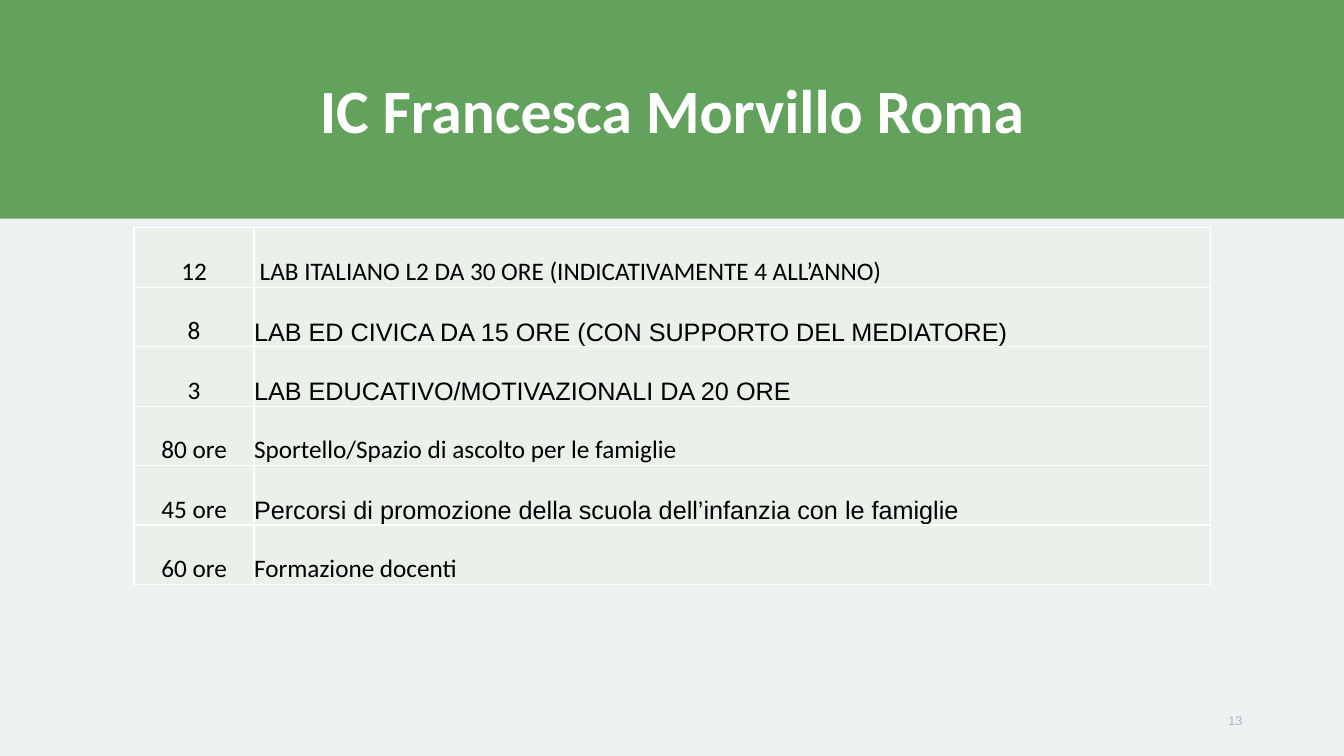
from dataclasses import dataclass

from lxml.etree import SubElement
from pptx import Presentation
from pptx.dml.color import RGBColor
from pptx.enum.shapes import MSO_SHAPE
from pptx.enum.text import MSO_ANCHOR, PP_ALIGN
from pptx.oxml.ns import qn
from pptx.util import Inches, Pt

GREEN, WHITE, BLACK = "62A25D", "FFFFFF", "000000"
PAGE, CELL, PAGE_NUMBER = "EDF1F2", "EAF0EA", "A7BBC0"


@dataclass(frozen=True)
class Activity:
    amount: str
    description: str
    font: str = "Calibri"


ACTIVITIES = [
    Activity("12", " LAB ITALIANO L2 DA 30 ORE (INDICATIVAMENTE 4 ALL’ANNO)"),
    Activity("8", "LAB ED CIVICA DA 15 ORE (CON SUPPORTO DEL MEDIATORE)", "Arial"),
    Activity("3", "LAB EDUCATIVO/MOTIVAZIONALI DA 20 ORE", "Arial"),
    Activity("80 ore", "Sportello/Spazio di ascolto per le famiglie"),
    Activity("45 ore", "Percorsi di promozione della scuola dell’infanzia con le famiglie", "Arial"),
    Activity("60 ore", "Formazione docenti"),
]
COLUMN_WIDTHS = (1.19, 9.49)
ROW_HEIGHT = 0.59


def rgb(color: str) -> RGBColor:
    return RGBColor.from_string(color)


def write(tf, text: str, size: float, font: str, color: str, align: PP_ALIGN, bold: bool = False):
    """Put one formatted run in the first paragraph and return the paragraph."""
    p = tf.paragraphs[0]
    p.alignment = align
    r = p.add_run()
    r.text = text
    r.font.size = Pt(size)
    r.font.name = font
    r.font.bold = bold
    r.font.color.rgb = rgb(color)
    return p


def add_text_box(s, left: float, top: float, width: float, height: float):
    """Add a wrapping, vertically centred text box and return its text frame."""
    tf = s.shapes.add_textbox(Inches(left), Inches(top), Inches(width), Inches(height)).text_frame
    tf.word_wrap = True
    tf.vertical_anchor = MSO_ANCHOR.MIDDLE
    return tf


def add_borders(cell, color: str, width: float) -> None:
    tc_pr = cell._tc.get_or_add_tcPr()
    for side in ("a:lnL", "a:lnR", "a:lnT", "a:lnB"):
        line = SubElement(tc_pr, qn(side), w=str(Pt(width)))
        SubElement(SubElement(line, qn("a:solidFill")), qn("a:srgbClr"), val=color)


def fill_cell(cell, text: str, font: str, align: PP_ALIGN) -> None:
    cell.margin_left = cell.margin_right = cell.margin_top = cell.margin_bottom = 0
    cell.vertical_anchor = MSO_ANCHOR.BOTTOM
    add_borders(cell, WHITE, 1)
    cell.fill.solid()
    cell.fill.fore_color.rgb = rgb(CELL)
    write(cell.text_frame, text, 18, font, BLACK, align)


def add_activities(s) -> None:
    table = s.shapes.add_table(
        len(ACTIVITIES), len(COLUMN_WIDTHS), Inches(1.33), Inches(2.26),
        Inches(sum(COLUMN_WIDTHS)), Inches(ROW_HEIGHT * len(ACTIVITIES)),
    ).table
    table.first_row = table.horz_banding = False
    for column, width in zip(table.columns, COLUMN_WIDTHS):
        column.width = Inches(width)
    for row, activity in zip(table.rows, ACTIVITIES):
        row.height = Inches(ROW_HEIGHT)
        fill_cell(row.cells[0], activity.amount, "Calibri", PP_ALIGN.CENTER)
        fill_cell(row.cells[1], activity.description, activity.font, PP_ALIGN.LEFT)


def main() -> None:
    prs = Presentation()
    prs.slide_width, prs.slide_height = Inches(13.33), Inches(7.5)
    s = prs.slides.add_slide(prs.slide_layouts[6])
    s.background.fill.solid()
    s.background.fill.fore_color.rgb = rgb(PAGE)

    band = s.shapes.add_shape(MSO_SHAPE.RECTANGLE, 0, 0, prs.slide_width, Inches(2.17))
    band.shadow.inherit = False
    band.fill.solid()
    band.fill.fore_color.rgb = rgb(GREEN)
    band.line.fill.background()

    title = add_text_box(s, 0.92, 0.4, 11.5, 1.45)
    p = write(title, "IC Francesca Morvillo Roma", 44, "Calibri", WHITE, PP_ALIGN.CENTER, bold=True)
    p.line_spacing = 0.9

    add_activities(s)
    write(add_text_box(s, 9.42, 6.95, 3, 0.4), "13", 9, "Arial", PAGE_NUMBER, PP_ALIGN.RIGHT)
    prs.save("out.pptx")


if __name__ == "__main__":
    main()
